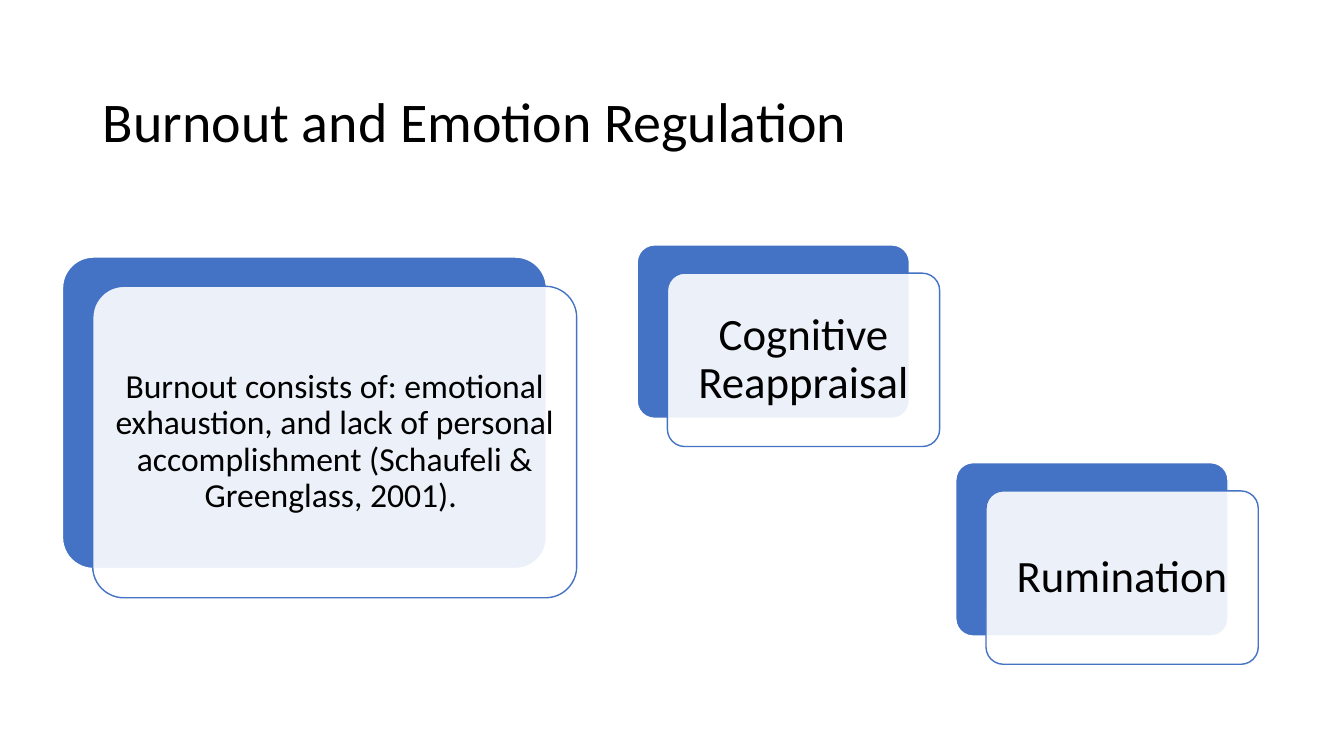
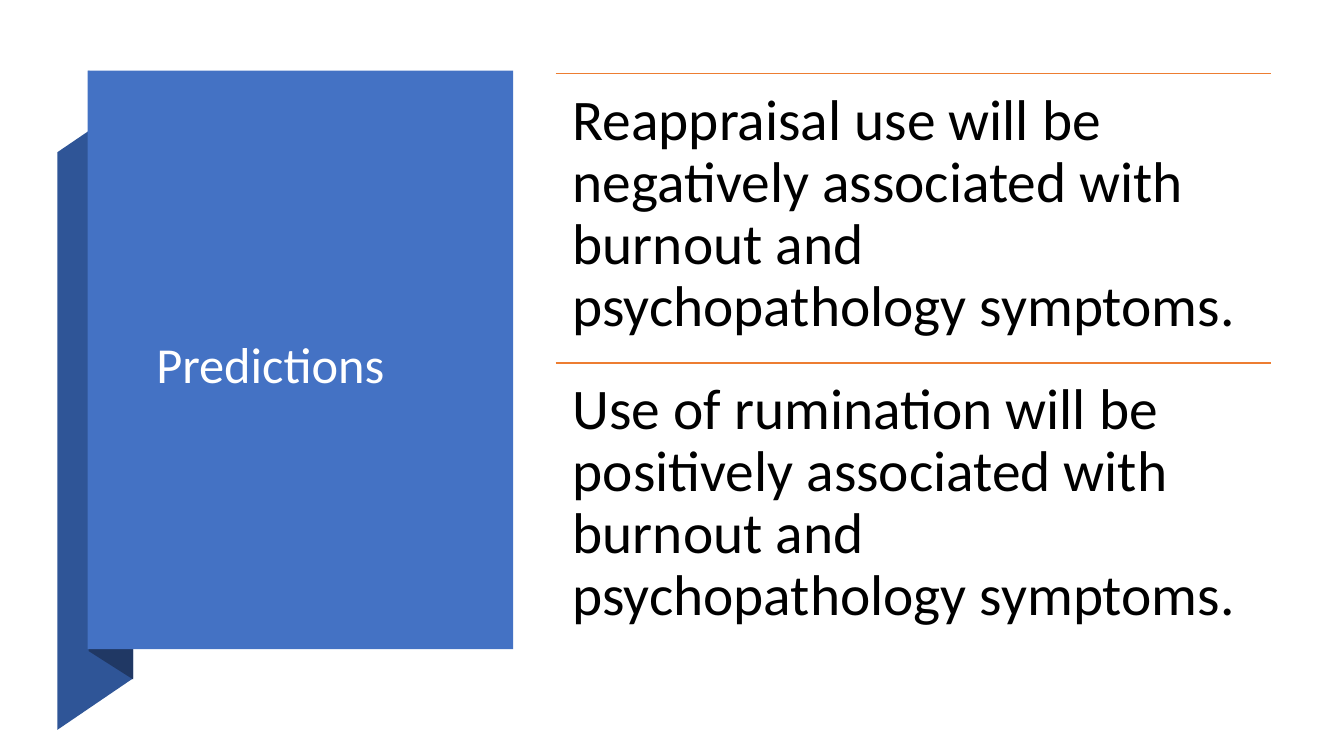
from dataclasses import dataclass

from lxml.etree import SubElement
from pptx import Presentation
from pptx.dml.color import RGBColor
from pptx.enum.shapes import MSO_CONNECTOR, MSO_SHAPE
from pptx.enum.text import MSO_ANCHOR, MSO_AUTO_SIZE, PP_ALIGN
from pptx.oxml.ns import qn
from pptx.util import Pt

PX = 9144  # EMU in one px, 100 px to the inch
TITLE_ONLY = 5


@dataclass(frozen=True)
class Theme:
    font: str = "Calibri"
    ink: str = "000000"
    paper: str = "FFFFFF"
    blue: str = "4472C4"
    fold: str = "2F5597"
    fold_shade: str = "203864"
    rule: str = "ED7D31"
    title: int = 40
    panel_title: int = 36
    statement: int = 41
    card: int = 32
    definition: int = 24
    line_spacing: float = 0.9
    line_width: int = 1
    card_opacity: int = 90


def px(*lengths):
    return [length * PX for length in lengths]


def assign(target, values):
    for name, value in values.items():
        setattr(target, name, value)


class Deck:
    """Holds the theme, the presentation and the current slide."""

    def __init__(self, theme):
        self.theme = theme
        self.file = Presentation()
        assign(self.file, {"slide_width": 1333 * PX, "slide_height": 750 * PX})

    def new_slide(self):
        self.slide = self.file.slides.add_slide(self.file.slide_layouts[TITLE_ONLY])

    def set_text(self, holder, text, size, color, align=PP_ALIGN.LEFT,
                 anchor=MSO_ANCHOR.MIDDLE, inset=(10, 5)):
        frame = holder.text_frame
        across, down = px(*inset)
        assign(frame, {
            "text": text, "word_wrap": True, "auto_size": MSO_AUTO_SIZE.NONE,
            "vertical_anchor": anchor,
            "margin_left": across, "margin_right": across,
            "margin_top": down, "margin_bottom": down,
        })
        paragraph = frame.paragraphs[0]
        assign(paragraph, {"alignment": align,
                           "line_spacing": self.theme.line_spacing})
        font = paragraph.runs[0].font
        assign(font, {"name": self.theme.font, "size": Pt(size)})
        font.color.rgb = RGBColor.from_string(color)

    def paint(self, shape, fill, line=None, opacity=100):
        shape.shadow.inherit = False
        shape.fill.solid()
        shape.fill.fore_color.rgb = RGBColor.from_string(fill)
        if opacity < 100:
            color = shape._element.spPr.find(f"{qn('a:solidFill')}/{qn('a:srgbClr')}")
            SubElement(color, qn("a:alpha"), val=str(opacity * 1000))
        if line:
            self.stroke(shape, line)
        else:
            shape.line.fill.background()

    def stroke(self, shape, color):
        shape.line.color.rgb = RGBColor.from_string(color)
        shape.line.width = Pt(self.theme.line_width)

    def title(self, text, box, size, color):
        heading = self.slide.shapes.title
        assign(heading, dict(zip(("left", "top", "width", "height"), px(*box))))
        self.set_text(heading, text, size, color)
        # Bring the title in front of what is already drawn
        heading._element.getparent().append(heading._element)

    def block(self, kind, box, fill, line=None, opacity=100):
        shape = self.slide.shapes.add_shape(kind, *px(*box))
        self.paint(shape, fill, line, opacity)
        return shape

    def card(self, text, box, size, offset=(30, 28)):
        left, top, width, height = box
        front_box = left + offset[0], top + offset[1], width, height
        theme = self.theme
        back = self.block(MSO_SHAPE.ROUNDED_RECTANGLE, box, theme.blue, theme.paper)
        front = self.block(MSO_SHAPE.ROUNDED_RECTANGLE, front_box, theme.paper,
                           theme.blue, theme.card_opacity)
        for layer in (back, front):
            layer.adjustments[0] = 0.1
        padding = round(size * 0.4)
        self.set_text(front, text, size, theme.ink, PP_ALIGN.CENTER,
                      inset=(padding, padding))

    def polygon(self, points, fill):
        builder = self.slide.shapes.build_freeform(*points[0], scale=PX)
        builder.add_line_segments(points[1:], close=True)
        self.paint(builder.convert_to_shape(), fill)

    def ruled_statement(self, text, box):
        left, top, width, _ = box
        rule = self.slide.shapes.add_connector(
            MSO_CONNECTOR.STRAIGHT, *px(left, top, left + width, top))
        self.stroke(rule, self.theme.rule)
        SubElement(rule._element.spPr, qn("a:effectLst"))
        statement = self.slide.shapes.add_textbox(*px(*box))
        self.set_text(statement, text, self.theme.statement, self.theme.ink,
                      anchor=MSO_ANCHOR.TOP, inset=(17, 17))


def burnout_slide(deck):
    theme = deck.theme
    deck.new_slide()
    deck.title("Burnout and Emotion Regulation", (92, 61, 1150, 124),
               theme.title, theme.ink)

    # Definition of burnout, then the two regulation strategies
    deck.card("Burnout consists of: emotional exhaustion, and lack of personal "
              "accomplishment (Schaufeli & Greenglass, 2001). ",
              (62, 255, 480, 309), theme.definition, (30, 29))
    strategies = {"Cognitive Reappraisal": (632, 243), "Rumination": (948, 459)}
    for strategy, corner in strategies.items():
        deck.card(strategy, (*corner, 270, 172), theme.card)


def predictions_slide(deck):
    theme = deck.theme
    deck.new_slide()

    # Folded ribbon behind the title panel
    deck.polygon([(57, 724), (132, 673), (132, 100), (57, 151)], theme.fold)
    deck.polygon([(88, 646), (132, 674), (132, 99), (88, 70)], theme.fold_shade)
    deck.block(MSO_SHAPE.RECTANGLE, (87, 70, 422, 574), theme.blue)
    deck.title("Predictions", (145, 167, 301, 394), theme.panel_title, theme.paper)

    # One ruled statement per prediction
    predictions = (
        "Reappraisal use will be negatively associated with burnout and "
        "psychopathology symptoms.",
        "Use of rumination will be positively associated with burnout and "
        "psychopathology symptoms.",
    )
    row_height = 287
    for row, prediction in enumerate(predictions):
        deck.ruled_statement(prediction,
                             (551, 73 + row * row_height, 710, row_height))


def main():
    deck = Deck(Theme())
    burnout_slide(deck)
    predictions_slide(deck)
    deck.file.save("out.pptx")


if __name__ == "__main__":
    main()
